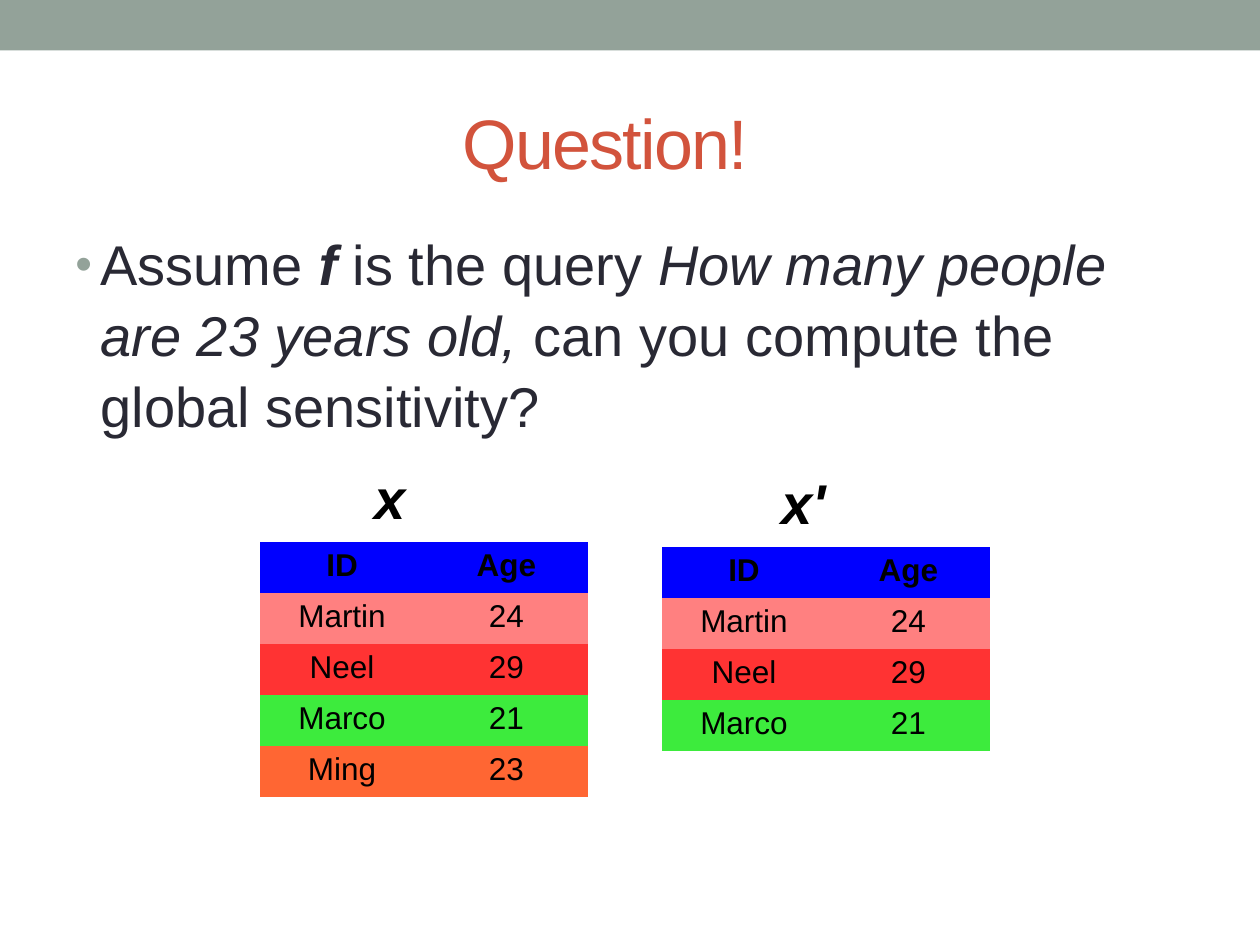
from lxml import etree
from pptx import Presentation
from pptx.dml.color import RGBColor
from pptx.enum.shapes import MSO_SHAPE
from pptx.enum.text import MSO_ANCHOR, PP_ALIGN
from pptx.oxml.ns import qn
from pptx.util import Inches, Pt

RECTANGLE = MSO_SHAPE.RECTANGLE
MIDDLE = MSO_ANCHOR.MIDDLE
LEFT, CENTER = PP_ALIGN.LEFT, PP_ALIGN.CENTER
TITLE_ONLY = 5

SAGE = RGBColor(0x93, 0xA2, 0x99)
RUST = RGBColor(0xD2, 0x53, 0x3C)
INK = RGBColor(0x29, 0x29, 0x34)
BLACK = RGBColor(0x00, 0x00, 0x00)
WHITE = RGBColor(0xFF, 0xFF, 0xFF)
BLUE = RGBColor(0x00, 0x00, 0xFF)
PINK = RGBColor(0xFF, 0x80, 0x80)
RED = RGBColor(0xFF, 0x33, 0x33)
GREEN = RGBColor(0x3D, 0xEB, 0x3D)
ORANGE = RGBColor(0xFF, 0x66, 0x33)

HEADER = ("ID", "Age", BLUE)
PEOPLE = [
    ("Martin", "24", PINK),
    ("Neel", "29", RED),
    ("Marco", "21", GREEN),
    ("Ming", "23", ORANGE),
]
COLUMN_WIDTHS = (1.31, 1.3)
ROW_HEIGHT = 0.405


class PageBuilder:
    def __init__(self, page, font="Arial"):
        self.page = page
        self.font = font

    def add_span(self, para, text, size, color, bold=False, italic=False):
        span = para.add_run()
        span.text = text
        font = span.font
        font.name, font.size = self.font, Pt(size)
        font.bold, font.italic = bold, italic
        font.color.rgb = color
        return span

    def add_band(self, left, top, width, height, color):
        band = self.page.shapes.add_shape(
            RECTANGLE, Inches(left), Inches(top), Inches(width), Inches(height))
        band.shadow.inherit = False
        band.fill.solid()
        band.fill.fore_color.rgb = color
        band.line.fill.background()

    def set_title(self, text, left, top, width, height, text_offset):
        title = self.page.shapes.title
        title.left, title.top = Inches(left), Inches(top)
        title.width, title.height = Inches(width), Inches(height)
        frame = title.text_frame
        frame.vertical_anchor = MIDDLE
        frame.margin_left = Inches(text_offset)
        para = frame.paragraphs[0]
        para.alignment = LEFT
        span = self.add_span(para, text, 40, RUST)
        span.font._element.set("spc", "-100")

    def add_text(self, left, top, width, height):
        """Add an empty wrapping text box and return its first paragraph."""
        box = self.page.shapes.add_textbox(
            Inches(left), Inches(top), Inches(width), Inches(height))
        box.text_frame.word_wrap = True
        return box.text_frame.paragraphs[0]

    def add_bullet(self, para, color, indent):
        properties = para._p.get_or_add_pPr()
        properties.set("marL", str(Inches(indent)))
        properties.set("indent", str(-Inches(indent)))
        bullet_color = etree.SubElement(properties, qn("a:buClr"))
        etree.SubElement(bullet_color, qn("a:srgbClr"), val=str(color))
        etree.SubElement(properties, qn("a:buSzPct"), val="85000")
        etree.SubElement(properties, qn("a:buFont"), typeface=self.font)
        etree.SubElement(properties, qn("a:buChar"), char="•")

    def add_borders(self, cell, color, width):
        properties = cell._tc.get_or_add_tcPr()
        for position, side in enumerate(("lnL", "lnR", "lnT", "lnB")):
            line = etree.Element(qn(f"a:{side}"), w=str(Pt(width)))
            fill = etree.SubElement(line, qn("a:solidFill"))
            etree.SubElement(fill, qn("a:srgbClr"), val=str(color))
            properties.insert(position, line)

    def add_people_table(self, left, top, people):
        rows = [HEADER, *people]
        table = self.page.shapes.add_table(
            len(rows), len(COLUMN_WIDTHS), Inches(left), Inches(top),
            Inches(sum(COLUMN_WIDTHS)), Inches(ROW_HEIGHT * len(rows))).table
        table.horz_banding = False
        for column, width in zip(table.columns, COLUMN_WIDTHS):
            column.width = Inches(width)
        for row_number, (*values, color) in enumerate(rows):
            for column_number, value in enumerate(values):
                cell = table.cell(row_number, column_number)
                cell.margin_top = Inches(0.08)
                cell.fill.solid()
                cell.fill.fore_color.rgb = color
                self.add_borders(cell, WHITE, 0.03)
                para = cell.text_frame.paragraphs[0]
                para.alignment = CENTER
                para.line_spacing = 0.87
                self.add_span(para, value, 18, BLACK, bold=row_number == 0)


def main():
    deck = Presentation()
    deck.slide_width, deck.slide_height = Inches(10), Inches(7.5)
    page = deck.slides.add_slide(deck.slide_layouts[TITLE_ONLY])
    builder = PageBuilder(page)

    builder.add_band(0, 0, 10, 0.4, SAGE)
    builder.set_title("Question!", 0.5, 0.58, 9, 1.08, text_offset=3.17)

    question = builder.add_text(0.5, 1.75, 9, 5.33)
    question.line_spacing = 1.05
    builder.add_bullet(question, SAGE, 0.2)
    for text, bold, italic in (
        ("Assume ", False, False),
        ("f ", True, True),
        ("is the query ", False, False),
        ("How many people are 23 years old, ", False, True),
        ("can you compute the global sensitivity?", False, False),
    ):
        builder.add_span(question, text, 32, INK, bold, italic)

    for name, label_left, table_left, table_top, people in (
        ("x", 2.87, 2.06, 4.3, PEOPLE),
        ("x'", 6.1, 5.25, 4.34, PEOPLE[:-1]),
    ):
        builder.add_people_table(table_left, table_top, people)
        label = builder.add_text(label_left, table_top - 0.67, 0.75, 0.59)
        builder.add_span(label, name, 32, BLACK, bold=True, italic=True)

    deck.save("out.pptx")


if __name__ == "__main__":
    main()
